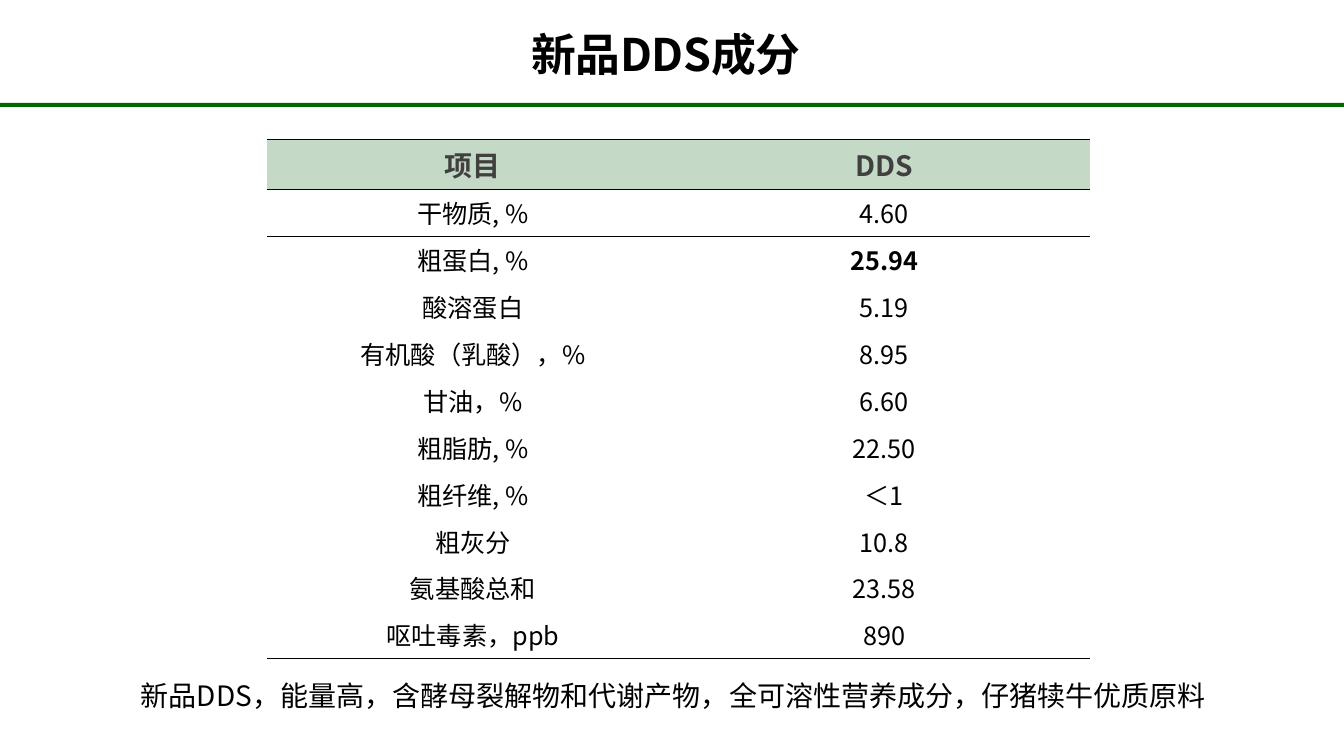
import pptx
import pptx.dml.color
import pptx.enum.shapes
import pptx.enum.text
import pptx.oxml
import pptx.oxml.ns
import pptx.util
from pptx.util import Inches

FONT = "Noto Sans CJK SC"
BLACK, GREY, GREEN, PALE_GREEN = "000000", "404040", "026701", "C4D9C6"
NO_STYLE = "{2D5ABB26-0587-4C30-8999-92F81FD0307C}"
TITLE = "新品DDS成分"
SUMMARY = "新品DDS，能量高，含酵母裂解物和代谢产物，全可溶性营养成分，仔猪犊牛优质原料"
COMPOSITION = [
    ("项目", "DDS"),
    ("干物质, %", "4.60"),
    ("粗蛋白, %", "25.94"),
    ("酸溶蛋白", "5.19"),
    ("有机酸（乳酸），%", "8.95"),
    ("甘油，%", "6.60"),
    ("粗脂肪, %", "22.50"),
    ("粗纤维, %", "＜1"),
    ("粗灰分", "10.8"),
    ("氨基酸总和", "23.58"),
    ("呕吐毒素，ppb", "890"),
]
HIGHLIGHT = "25.94"
HEADER_HEIGHT, ROW_HEIGHT, COLUMN_WIDTH = 0.5, 0.465, 4.08


def color(value):
    return pptx.dml.color.RGBColor.from_string(value)


def write(frame, text, size, ink=BLACK, bold=False):
    paragraph = frame.paragraphs[0]
    paragraph.alignment = pptx.enum.text.PP_ALIGN.CENTER
    run = paragraph.add_run()
    run.text = text
    run.font.size = pptx.util.Pt(size)
    run.font.bold = bold
    run.font.color.rgb = color(ink)
    run.font.name = FONT
    east_asian = pptx.oxml.parse_xml(
        f'<a:ea {pptx.oxml.ns.nsdecls("a")} typeface="{FONT}"/>')
    run.font._element.find(pptx.oxml.ns.qn("a:latin")).addnext(east_asian)
    return paragraph


def text_line(left, top, width, height, text, size, bold=False):
    box = slide.shapes.add_textbox(
        Inches(left), Inches(top), Inches(width), Inches(height))
    frame = box.text_frame
    frame.word_wrap = True
    frame.margin_left = frame.margin_right = 0
    frame.margin_top = frame.margin_bottom = 0
    frame.vertical_anchor = pptx.enum.text.MSO_ANCHOR.MIDDLE
    return write(frame, text, size, bold=bold)


def add_borders(cell, sides):
    for place, side in enumerate(sides):
        border = pptx.oxml.parse_xml(
            f'<a:ln{side} {pptx.oxml.ns.nsdecls("a")} w="12700"><a:solidFill>'
            f'<a:srgbClr val="{BLACK}"/></a:solidFill></a:ln{side}>')
        cell._tc.get_or_add_tcPr().insert(place, border)


deck = pptx.Presentation()
deck.slide_width, deck.slide_height = Inches(13.33), Inches(7.5)
slide = deck.slides.add_slide(deck.slide_layouts[6])

rule = slide.shapes.add_shape(
    pptx.enum.shapes.MSO_SHAPE.RECTANGLE,
    0, Inches(1.02), deck.slide_width, Inches(0.04))
rule.shadow.inherit = False
rule.fill.solid()
rule.fill.fore_color.rgb = color(GREEN)
rule.line.fill.background()

text_line(1.21, 6.62, 10.94, 0.55, SUMMARY, 20)

table_height = HEADER_HEIGHT + ROW_HEIGHT * (len(COMPOSITION) - 1)
table = slide.shapes.add_table(
    len(COMPOSITION), 2, Inches(2.65), Inches(1.38),
    Inches(2 * COLUMN_WIDTH), Inches(table_height)).table
table.horz_banding = False
table._tbl.tblPr.find(pptx.oxml.ns.qn("a:tableStyleId")).text = NO_STYLE
for column in table.columns:
    column.width = Inches(COLUMN_WIDTH)

last = len(COMPOSITION) - 1
for r, row in enumerate(COMPOSITION):
    header = r == 0
    table.rows[r].height = Inches(HEADER_HEIGHT if header else ROW_HEIGHT)
    for c, text in enumerate(row):
        cell = table.cell(r, c)
        cell.vertical_anchor = pptx.enum.text.MSO_ANCHOR.MIDDLE
        if header:
            cell.fill.solid()
            cell.fill.fore_color.rgb = color(PALE_GREEN)
            write(cell.text_frame, text, 20, GREY, bold=True)
        else:
            cell.fill.background()
            write(cell.text_frame, text, 18, bold=text == HIGHLIGHT)
        add_borders(cell, {0: "TB", 1: "T", last: "B"}.get(r, ""))

title = text_line(0.26, 0.31, 12.69, 0.51, TITLE, 32, bold=True)
title.line_spacing = 0.91
title.runs[0].font._element.set("spc", "-30")

deck.save("out.pptx")
